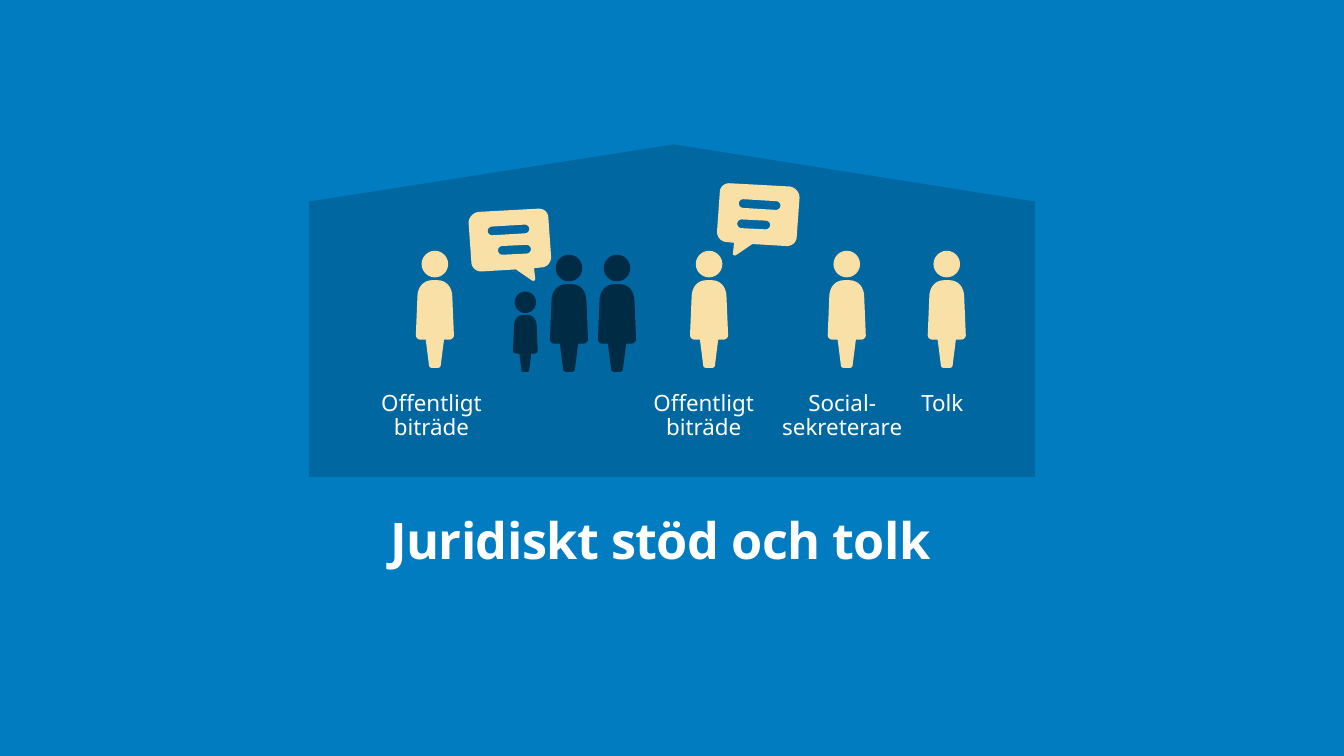
from math import cos, pi, sin

from lxml import etree
from pptx import Presentation
from pptx.dml.color import RGBColor
from pptx.enum import shapes, text
from pptx.oxml import ns
from pptx.util import Cm, Pt

COLORS = {"sky": "017CC1", "navy": "002B45", "cream": "F9E0A7", "white": "FFFFFF"}
FONT = "Noto Sans"
HOUSE = [(16.98, 3.64), (26.08, 5.08), (26.08, 12.02), (7.79, 12.02), (7.79, 5.08)]
BODY_HEIGHT = 2.21
HALF_BODY = [
    [(0.05, -2.21)],
    [(0.29, -2.21), (0.44, -2.04), (0.44, -1.78)],
    [(0.48, -0.82)],
    [(0.48, -0.77), (0.43, -0.71), (0.36, -0.71)],
    [(0.23, -0.71)],
    [(0.15, -0.08)],
    [(0.15, -0.03), (0.12, 0), (0.08, 0)],
]
BUBBLE = [
    [(0.97, -0.56)],
    [(0.97, -0.71), (0.84, -0.81), (0.69, -0.79)],
    [(-0.79, -0.71)],
    [(-0.94, -0.69), (-1.04, -0.56), (-1.04, -0.43)],
    [(-0.97, 0.56)],
    [(-0.97, 0.69), (-0.84, 0.81), (-0.69, 0.79)],
    [(0.15, 0.74)],
    [(0.56, 1.02)],
    [(0.58, 1.04), (0.64, 1.02), (0.64, 0.99)],
    [(0.61, 0.71)],
    [(0.79, 0.69)],
    [(0.94, 0.69), (1.04, 0.56), (1.04, 0.43)],
]
BUBBLE_LINES = [((-0.45, -0.23), (0.38, -0.28)), ((-0.19, 0.26), (0.42, 0.23))]
ADULT = (1, 0.67)
CHILD = (0.65, 0.54)
PEOPLE = [
    (10.96, 9.27, "cream", ADULT),
    (13.24, 9.37, "navy", CHILD),
    (14.34, 9.37, "navy", ADULT),
    (15.55, 9.37, "navy", ADULT),
    (17.87, 9.27, "cream", ADULT),
    (21.34, 9.27, "cream", ADULT),
    (23.86, 9.27, "cream", ADULT),
]
LABELS = [
    (9.4, 3.2, ["Offentligt", "biträde"]),
    (16.26, 3.2, ["Offentligt", "biträde"]),
    (19.28, 4.14, ["Social-", "sekreterare"]),
    (22.2, 3.35, ["Tolk"]),
]


def flatten(segments, steps=8):
    """Turn line and cubic curve segments into a list of points."""
    points = []
    for segment in segments:
        if len(segment) == 1:
            points += segment
            continue
        curve = [points[-1], *segment]
        for step in range(1, steps + 1):
            t = step / steps
            weights = ((1 - t) ** 3, 3 * t * (1 - t) ** 2, 3 * t * t * (1 - t), t**3)
            points.append(tuple(sum(w * p[axis] for w, p in zip(weights, curve)) for axis in (0, 1)))
    return points


def capsule(start, end, radius=0.11, steps=8):
    """Return the outline of a round-ended bar between two points."""
    caps = ((start, pi / 2), (end, 3 * pi / 2))
    return [
        (x + radius * cos(first + pi * step / steps), y + radius * sin(first + pi * step / steps))
        for (x, y), first in caps
        for step in range(steps + 1)
    ]


def paint(shape, color):
    """Give a shape a plain fill without line or shadow."""
    shape.shadow.inherit = False
    shape.fill.solid()
    shape.fill.fore_color.rgb = RGBColor.from_string(COLORS[color])
    shape.line.fill.background()


def add_outline(slide, contours, color, origin=(0, 0), scale=(1, 1)):
    """Draw closed contours as one filled freeform."""
    placed = [
        [(Cm(origin[0] + x * scale[0]), Cm(origin[1] + y * scale[1])) for x, y in contour]
        for contour in contours
    ]
    builder = slide.shapes.build_freeform(*placed[0][0])
    builder.add_line_segments(placed[0][1:], close=True)
    for contour in placed[1:]:
        builder.move_to(*contour[0])
        builder.add_line_segments(contour[1:], close=True)
    shape = builder.convert_to_shape()
    paint(shape, color)
    return shape


def add_house(slide):
    """Draw the translucent house behind the people."""
    house = add_outline(slide, [HOUSE], "navy")
    color = house.fill._xPr.find(".//" + ns.qn("a:srgbClr"))
    etree.SubElement(color, ns.qn("a:alpha")).set("val", "26000")


def add_person(slide, center, foot, color, build):
    """Draw a body standing at foot height with a round head above."""
    size, head = build
    right = flatten(HALF_BODY)
    left = [(-x, y) for x, y in reversed(right)]
    add_outline(slide, [right + left], color, (center, foot), (size, size))
    top = foot - (BODY_HEIGHT + 0.07) * size - head
    oval = slide.shapes.add_shape(
        shapes.MSO_SHAPE.OVAL, Cm(center - head / 2), Cm(top), Cm(head), Cm(head)
    )
    paint(oval, color)


def add_bubble(slide, x, y, direction):
    """Draw a speech bubble with two cut-out lines; direction -1 mirrors it."""
    contours = [flatten(BUBBLE)] + [capsule(*ends) for ends in BUBBLE_LINES]
    add_outline(slide, contours, "cream", (x, y), (direction, 1))


def add_text(slide, box, lines, size, top_inset=0.13, align=text.PP_ALIGN.CENTER, bold=False):
    """Add a text box with one paragraph a line and return its frame."""
    frame = slide.shapes.add_textbox(*map(Cm, box)).text_frame
    frame.word_wrap = True
    frame.margin_left, frame.margin_top = 0, Cm(top_inset)
    frame.margin_right, frame.margin_bottom = Cm(0.25), Cm(0.13)
    frame.text = "\n".join(lines)
    for paragraph in frame.paragraphs:
        paragraph.alignment = align
        paragraph.line_spacing = 0.9
        paragraph.font.name = FONT
        paragraph.font.size = Pt(size)
        paragraph.font.bold = bold
        paragraph.font.color.rgb = RGBColor.from_string(COLORS["white"])
    return frame


def add_title(slide, title):
    """Add the slightly tightened title under the house."""
    box = (9.83, 13, 14.2, 3.3)
    frame = add_text(slide, box, [title], 36, 0, text.PP_ALIGN.LEFT, True)
    frame.paragraphs[0].runs[0].font._element.set("spc", "-40")


def main():
    """Build the slide and save it."""
    presentation = Presentation()
    presentation.slide_width, presentation.slide_height = Cm(33.87), Cm(19.05)
    slide = presentation.slides.add_slide(presentation.slide_layouts[6])
    slide.background.fill.solid()
    slide.background.fill.fore_color.rgb = RGBColor.from_string(COLORS["sky"])
    add_title(slide, "Juridiskt stöd och tolk")
    add_house(slide)
    for person in PEOPLE:
        add_person(slide, *person)
    for left, width, lines in LABELS:
        add_text(slide, (left, 9.75, width, 2.26), lines, 16)
    add_bubble(slide, 12.85, 6.05, 1)
    add_bubble(slide, 19.11, 5.41, -1)
    presentation.save("out.pptx")


if __name__ == "__main__":
    main()
